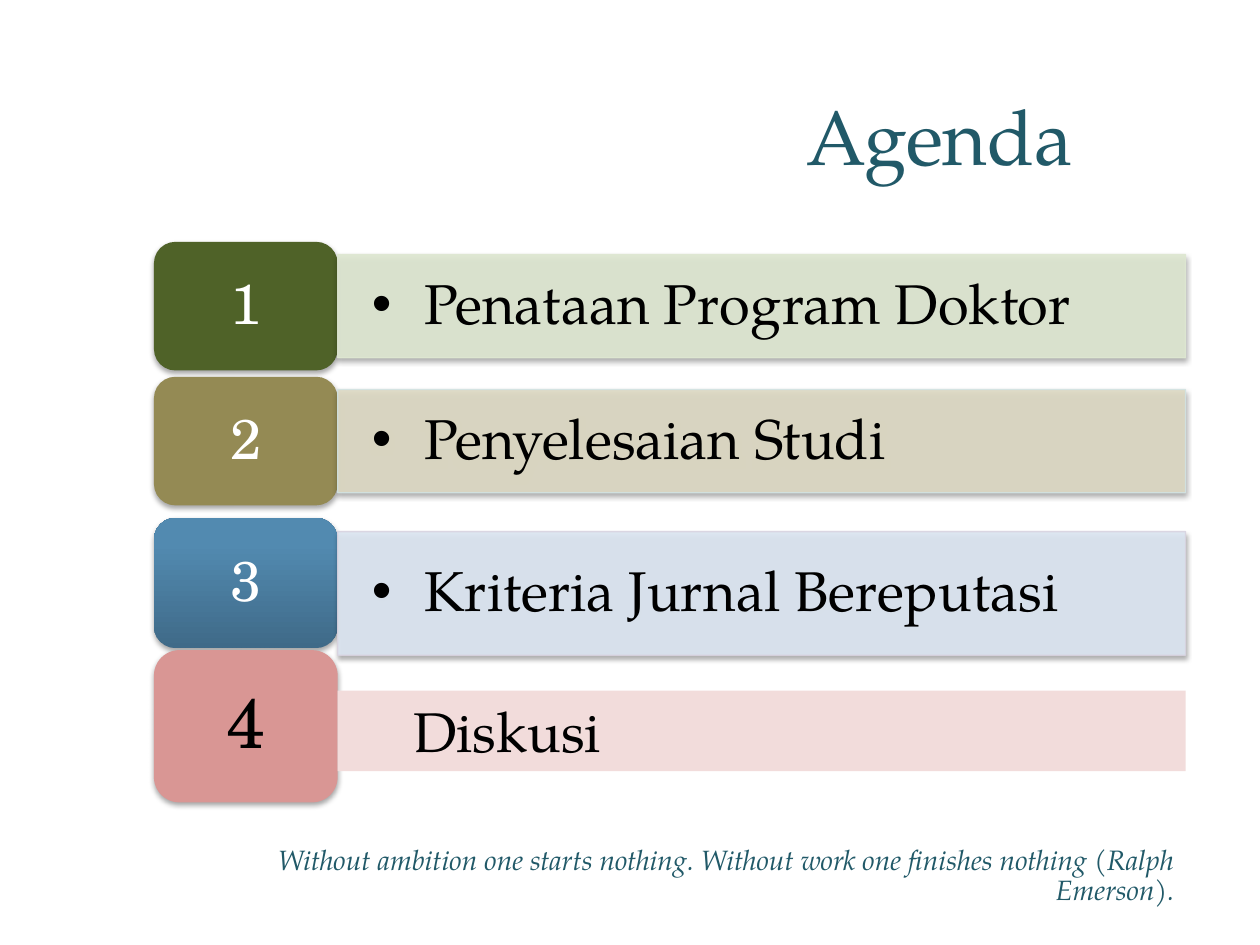
"""Build the agenda slide: four numbered topic rows, a title and a closing quote."""
from dataclasses import dataclass
from typing import Any, Optional

from lxml.etree import SubElement
from pptx import Presentation
from pptx.dml.color import RGBColor
from pptx.enum.shapes import MSO_SHAPE
from pptx.enum.text import MSO_ANCHOR, PP_ALIGN
from pptx.oxml.ns import qn
from pptx.util import Pt

BODY_FONT, NUMBER_FONT = "TeX Gyre Pagella", "TeX Gyre Schola"
TILE_LEFT, BAR_LEFT, BAR_RIGHT = 88, 193, 677.5
TEAL, BLACK, WHITE = "215968", "000000", "FFFFFF"


@dataclass
class Band:
    top: float
    height: float
    color: str


@dataclass
class Topic:
    number: str
    label: str
    tile: Band
    bar: Band
    edge: Optional[str] = None
    tile_top_color: Optional[str] = None
    number_color: str = WHITE
    number_size: float = 32
    tile_inset: float = 13


TOPICS = [
    Topic("1", "Penataan Program Doktor", Band(138.2, 73.5, "4F6228"),
          Band(145.5, 59, "DEE7D1"), "DEE7D1"),
    Topic("2", "Penyelesaian Studi", Band(215.3, 73.5, "948A54"),
          Band(222.6, 59, "DDD9C3"), "D2E3E2"),
    Topic("3", "Kriteria Jurnal Bereputasi", Band(295.9, 74.5, "3F6A88"),
          Band(303.8, 70.6, "DCE6F2"), "D8D3E0", "528AB0"),
    Topic("4", "Diskusi", Band(371.5, 87, "D99694"),
          Band(394.6, 46, "F2DCDB"), None, None, BLACK, 40, 16),
]


def rgb(code: str) -> RGBColor:
    """Turn a hex string into a colour."""
    return RGBColor.from_string(code)


def apply(target: Any, values: dict) -> None:
    """Set every attribute named in a dict of format values."""
    for name, value in values.items():
        setattr(target, name, value)


def write(shape: Any, text: str, size: float, color: str, font: str = BODY_FONT,
          frame: Optional[dict] = None, layout: Optional[dict] = None,
          left: float = 0, first: float = 0, bullet: bool = False,
          italic: bool = False) -> None:
    """Put one formatted paragraph into a shape."""
    apply(shape.text_frame, {"word_wrap": True, **(frame or {})})
    paragraph = shape.text_frame.paragraphs[0]
    properties = paragraph._p.get_or_add_pPr()
    properties.set("marL", str(Pt(left)))
    properties.set("indent", str(Pt(first)))
    if bullet:
        SubElement(properties, qn("a:buFont"), typeface="Arial")
        SubElement(properties, qn("a:buChar"), char="•")
    apply(paragraph, layout or {})
    run = paragraph.add_run()
    run.text = text
    apply(run.font, {"name": font, "size": Pt(size), "italic": italic})
    run.font.color.rgb = rgb(color)


def add_shadow(shape: Any) -> None:
    """Give a shape a soft shadow below it."""
    effects = shape._element.spPr.find(qn("a:effectLst"))
    shadow = SubElement(effects, qn("a:outerShdw"), blurRad=str(Pt(3.1)),
                        dist=str(Pt(1.8)), dir="5400000", rotWithShape="0")
    tone = SubElement(shadow, qn("a:srgbClr"), val=BLACK)
    SubElement(tone, qn("a:alpha"), val="35000")


def add_block(shapes: Any, kind: MSO_SHAPE, left: float, right: float,
              band: Band) -> Any:
    """Draw a plain filled block without a line."""
    block = shapes.add_shape(kind, Pt(left), Pt(band.top),
                             Pt(right - left), Pt(band.height))
    block.shadow.inherit = False
    block.fill.solid()
    block.fill.fore_color.rgb = rgb(band.color)
    block.line.fill.background()
    return block


def add_bar(shapes: Any, topic: Topic) -> None:
    """Draw the wide bar that carries a topic's label."""
    bar = add_block(shapes, MSO_SHAPE.RECTANGLE, BAR_LEFT, BAR_RIGHT, topic.bar)
    layout = {"alignment": PP_ALIGN.LEFT}
    if topic.edge is None:
        write(bar, topic.label, 32, BLACK, layout=layout, left=36,
              frame={"vertical_anchor": MSO_ANCHOR.TOP})
        return
    bar.line.color.rgb = rgb(topic.edge)
    bar.line.width = Pt(0.75)
    for tone in bar._element.spPr.iter(qn("a:srgbClr")):
        SubElement(tone, qn("a:alpha"), val="90000")
    add_shadow(bar)
    write(bar, topic.label, 32, BLACK, left=30, first=-30, bullet=True,
          layout={**layout, "line_spacing": 0.9},
          frame={"vertical_anchor": MSO_ANCHOR.MIDDLE,
                 "margin_left": Pt(19.5), "margin_right": Pt(19.5),
                 "margin_top": Pt(10), "margin_bottom": Pt(10)})


def add_tile(shapes: Any, topic: Topic) -> None:
    """Draw the rounded tile that carries a topic's number."""
    tile = add_block(shapes, MSO_SHAPE.ROUNDED_RECTANGLE, TILE_LEFT, BAR_LEFT,
                     topic.tile)
    if topic.tile_top_color:
        tile.fill.gradient()
        tile.fill.gradient_angle = 90
        colors = (topic.tile.color, topic.tile_top_color)
        for stop, color, position in zip(tile.fill.gradient_stops, colors, (0, 0.8)):
            stop.color.rgb = rgb(color)
            stop.position = position
    add_shadow(tile)
    write(tile, topic.number, topic.number_size, topic.number_color, NUMBER_FONT,
          layout={"alignment": PP_ALIGN.CENTER, "line_spacing": 0.9},
          frame={"vertical_anchor": MSO_ANCHOR.MIDDLE,
                 "margin_left": Pt(topic.tile_inset),
                 "margin_right": Pt(topic.tile_inset)})


def main() -> None:
    """Assemble and save the slide."""
    deck = Presentation()
    apply(deck, {"slide_width": Pt(720), "slide_height": Pt(540)})
    shapes = deck.slides.add_slide(deck.slide_layouts[6]).shapes
    for topic in TOPICS:
        add_tile(shapes, topic)
        add_bar(shapes, topic)
    title = shapes.add_textbox(Pt(65.5), Pt(31.7), Pt(566), Pt(90))
    write(title, "Agenda ", 44, TEAL, layout={"alignment": PP_ALIGN.RIGHT},
          frame={"vertical_anchor": MSO_ANCHOR.MIDDLE})
    quote = shapes.add_textbox(Pt(90), Pt(480.2), Pt(588.2), Pt(42.5))
    write(quote, "Without ambition one starts nothing. Without work one finishes "
          "nothing (Ralph Emerson).", 16, TEAL, left=48, first=-48, italic=True,
          layout={"alignment": PP_ALIGN.RIGHT, "line_spacing": 0.9})
    deck.save("out.pptx")


if __name__ == "__main__":
    main()
